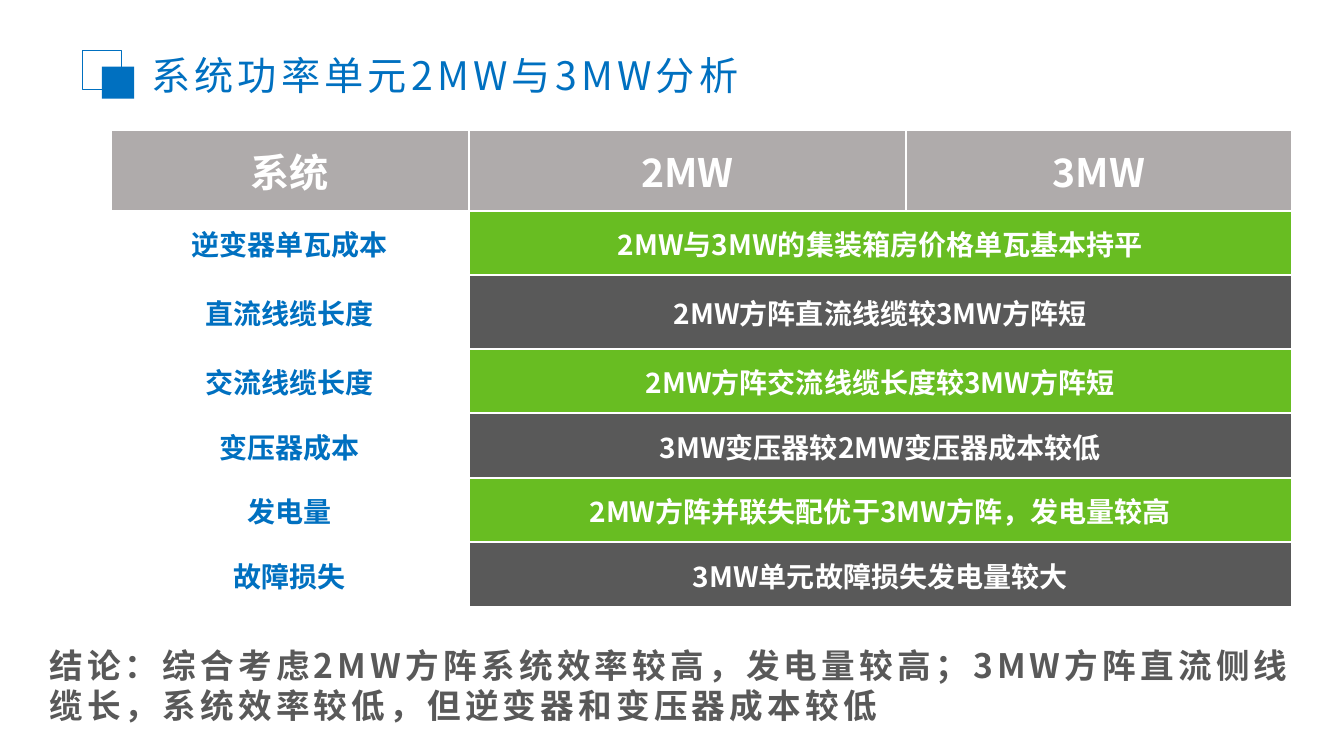
from lxml import etree
from pptx import Presentation
from pptx.dml.color import RGBColor
from pptx.enum.shapes import MSO_SHAPE
from pptx.enum.text import MSO_ANCHOR, MSO_AUTO_SIZE, PP_ALIGN
from pptx.oxml import parse_xml
from pptx.oxml.ns import nsdecls, qn
from pptx.util import Inches, Pt

TITLE = "系统功率单元2MW与3MW分析"
HEADERS = ["系统", "2MW", "3MW"]
COMPARISONS = [
    ("逆变器单瓦成本", "2MW与3MW的集装箱房价格单瓦基本持平"),
    ("直流线缆长度", "2MW方阵直流线缆较3MW方阵短"),
    ("交流线缆长度", "2MW方阵交流线缆长度较3MW方阵短"),
    ("变压器成本", "3MW变压器较2MW变压器成本较低"),
    ("发电量", "2MW方阵并联失配优于3MW方阵，发电量较高"),
    ("故障损失", "3MW单元故障损失发电量较大"),
]
CONCLUSION = ("结论：综合考虑2MW方阵系统效率较高，发电量较高；3MW方阵直流侧线缆长，"
              "系统效率较低，但逆变器和变压器成本较低")
COLUMN_WIDTHS = [3.55, 4.34, 3.82]
ROW_HEIGHTS = [0.8, 0.64, 0.73, 0.64, 0.64, 0.64, 0.64]

FONT = "Noto Sans CJK SC"
BLUE = RGBColor(0x00, 0x70, 0xC0)
GREEN = RGBColor(0x68, 0xBD, 0x22)
DARK = RGBColor(0x59, 0x59, 0x59)
GRAY = RGBColor(0xAF, 0xAB, 0xAB)
WHITE = RGBColor(0xFF, 0xFF, 0xFF)
RECTANGLE = MSO_SHAPE.RECTANGLE
MIDDLE = MSO_ANCHOR.MIDDLE
FIXED = MSO_AUTO_SIZE.NONE
LEFT, CENTER = PP_ALIGN.LEFT, PP_ALIGN.CENTER


def write(frame, text, size, color, bold=False, align=LEFT, tracking=0):
    """Fill a text frame with one formatted paragraph."""
    para = frame.paragraphs[0]
    para.alignment = align
    span = para.add_run()
    span.text = text
    span.font.name = FONT
    span.font.size = Pt(size)
    span.font.bold = bold
    span.font.color.rgb = color
    properties = span.font._element
    etree.SubElement(properties, qn("a:ea")).set("typeface", FONT)
    if tracking:
        properties.set("spc", str(tracking * 100))


def write_block(box, area, text, **style):
    """Place a wrapped text block and write into it."""
    box.left, box.top, box.width, box.height = map(Inches, area)
    frame = box.text_frame
    frame.word_wrap = True
    frame.auto_size = FIXED
    frame.vertical_anchor = MIDDLE
    write(frame, text, tracking=3, **style)


def add_square(page, left, top, side):
    """Add a shadowless square."""
    square = page.shapes.add_shape(
        RECTANGLE, Inches(left), Inches(top), Inches(side), Inches(side))
    square.shadow.inherit = False
    return square


def format_cell(cell, fill=None):
    """Set margins, white borders and fill of a table cell."""
    cell.vertical_anchor = MIDDLE
    cell.margin_left = cell.margin_right = cell.margin_top = Inches(0.01)
    cell.margin_bottom = 0
    properties = cell._tc.get_or_add_tcPr()
    for side in "LRTB":
        properties.append(parse_xml(
            f'<a:ln{side} {nsdecls("a")} w="{Pt(1.5)}"><a:solidFill>'
            f'<a:srgbClr val="{WHITE}"/></a:solidFill></a:ln{side}>'))
    if fill is None:
        cell.fill.background()
    else:
        cell.fill.solid()
        cell.fill.fore_color.rgb = fill


def add_comparison(page):
    """Add the comparison table with merged result cells."""
    table = page.shapes.add_table(
        len(ROW_HEIGHTS), len(COLUMN_WIDTHS), Inches(1.1), Inches(1.29),
        Inches(sum(COLUMN_WIDTHS)), Inches(sum(ROW_HEIGHTS))).table
    for column, width in zip(table.columns, COLUMN_WIDTHS):
        column.width = Inches(width)
    for row, height in zip(table.rows, ROW_HEIGHTS):
        row.height = Inches(height)
    for index, header in enumerate(HEADERS):
        cell = table.cell(0, index)
        format_cell(cell, GRAY)
        write(cell.text_frame, header, 28, WHITE, bold=True, align=CENTER)
    for index, (topic, result) in enumerate(COMPARISONS, 1):
        fill = GREEN if index % 2 else DARK
        topic_cell, result_cell, last_cell = table.rows[index].cells
        result_cell.merge(last_cell)
        format_cell(topic_cell)
        format_cell(result_cell, fill)
        format_cell(last_cell, fill)
        write(topic_cell.text_frame, topic, 20, BLUE, bold=True, align=CENTER)
        write(result_cell.text_frame, result, 20, WHITE, bold=True, align=CENTER)


def main():
    """Build and save the slide."""
    deck = Presentation()
    deck.slide_width, deck.slide_height = Inches(13.33), Inches(7.5)
    page = deck.slides.add_slide(deck.slide_layouts[5])
    add_comparison(page)
    write_block(page.shapes.add_textbox(0, 0, 0, 0), (0.39, 6.34, 12.75, 0.91),
                CONCLUSION, size=24, color=DARK, bold=True)
    write_block(page.shapes.title, (1.4, 0.46, 6.88, 0.57),
                TITLE, size=28, color=BLUE)
    outline = add_square(page, 0.82, 0.5, 0.39)
    outline.fill.background()
    outline.line.color.rgb = BLUE
    outline.line.width = Pt(0.75)
    accent = add_square(page, 1.01, 0.66, 0.32)
    accent.fill.solid()
    accent.fill.fore_color.rgb = BLUE
    accent.line.fill.background()
    deck.save("out.pptx")


if __name__ == "__main__":
    main()
